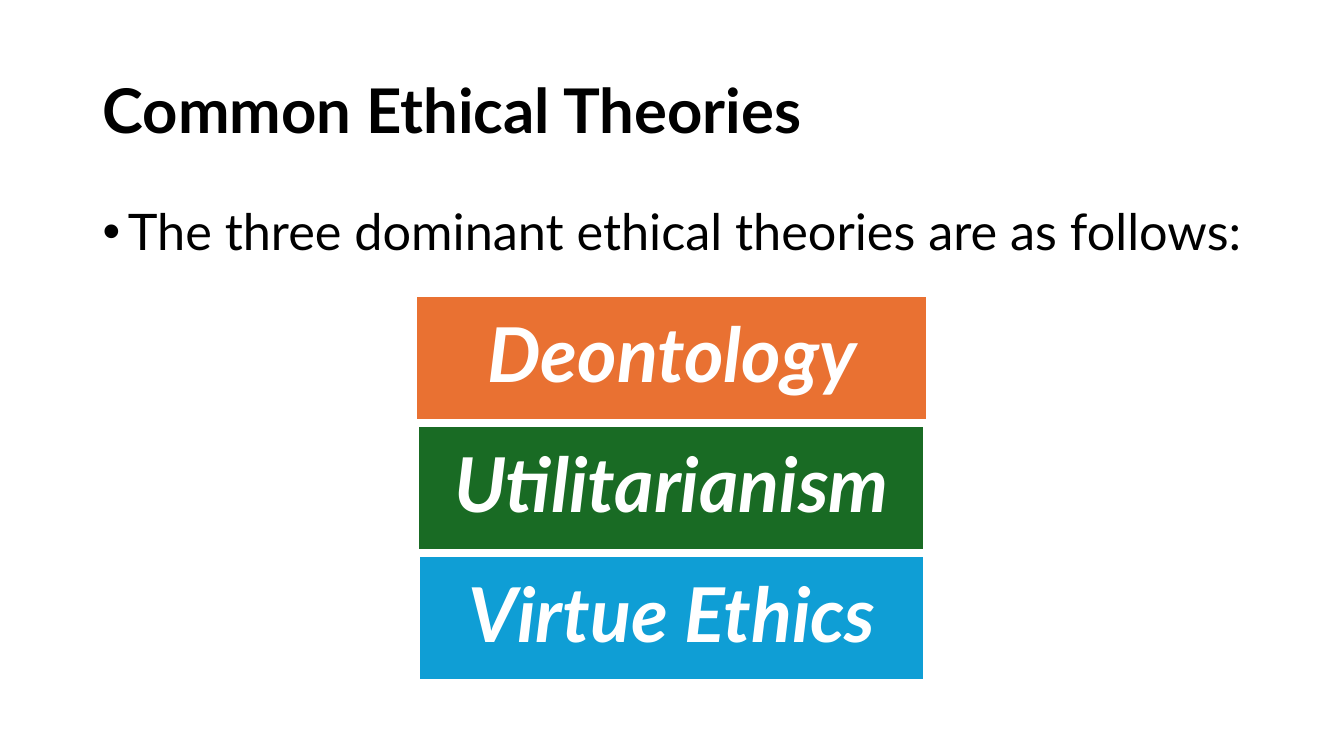
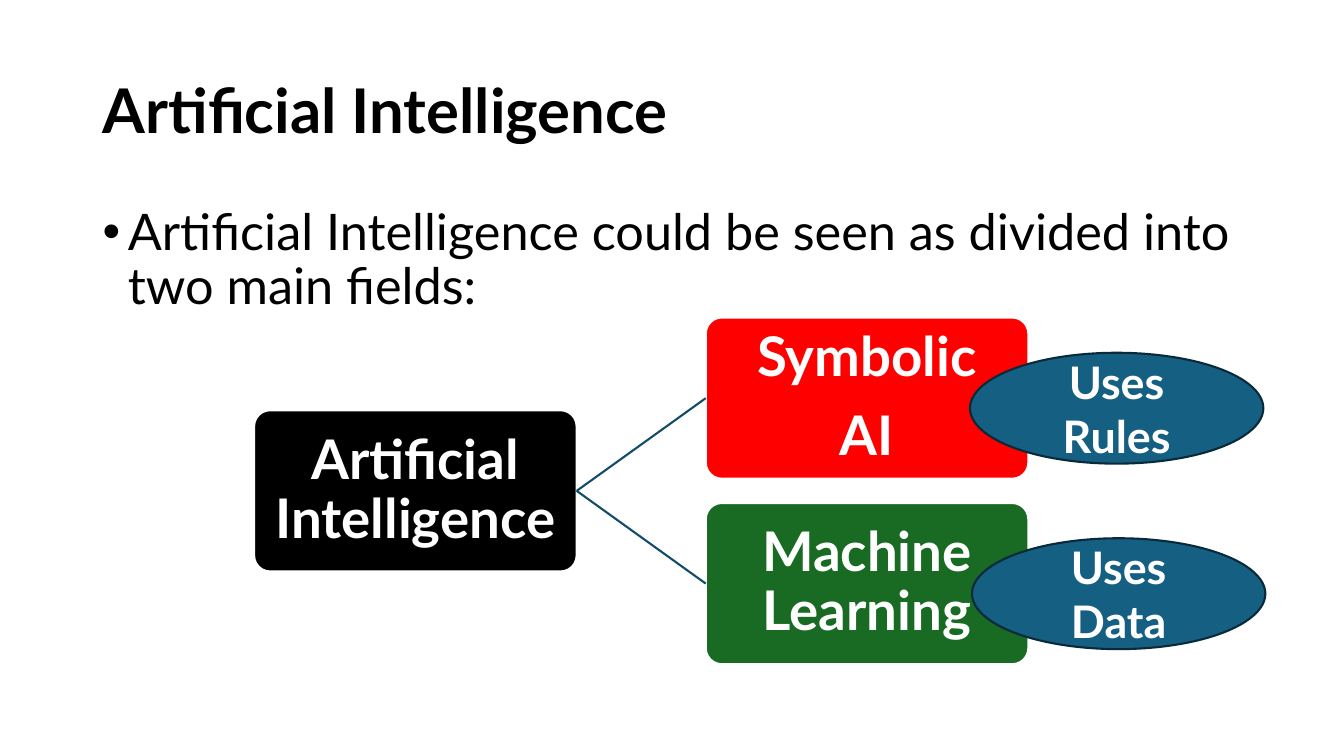
import pptx
import pptx.dml.color
import pptx.enum.shapes
import pptx.enum.text
import pptx.oxml.ns
import pptx.util
from lxml import etree

RGBColor = pptx.dml.color.RGBColor
Pt = pptx.util.Pt
SHAPE = pptx.enum.shapes.MSO_SHAPE
ALIGN = pptx.enum.text.PP_ALIGN
ANCHOR = pptx.enum.text.MSO_ANCHOR
qn = pptx.oxml.ns.qn

BLACK = RGBColor(0x00, 0x00, 0x00)
WHITE = RGBColor(0xFF, 0xFF, 0xFF)
ORANGE = RGBColor(0xE9, 0x71, 0x32)
GREEN = RGBColor(0x19, 0x6B, 0x24)
BLUE = RGBColor(0x0F, 0x9E, 0xD5)
RED = RGBColor(0xFF, 0x00, 0x00)
TEAL = RGBColor(0x15, 0x60, 0x82)
TEAL_LINE = RGBColor(0x11, 0x4D, 0x68)
TEAL_EDGE = RGBColor(0x09, 0x2A, 0x39)

EMU_PER_PX = 9144  # 100 px to the inch
SLIDE_W, SLIDE_H = 1333, 750


def px(n):
    return pptx.util.Emu(n * EMU_PER_PX)


class Deck:
    FONT = "Lato"
    LINE_WIDTH = Pt(1.5)
    TITLE = dict(size=Pt(44), bold=True, color=BLACK)
    BODY = dict(size=Pt(36), color=BLACK)
    BAR = dict(size=Pt(54), bold=True, italic=True, color=WHITE)
    NODE = dict(size=Pt(39), bold=True, color=WHITE)
    NOTE = dict(size=Pt(32), bold=True, color=WHITE)

    def __init__(self):
        self.prs = pptx.Presentation()
        self.prs.slide_width, self.prs.slide_height = px(SLIDE_W), px(SLIDE_H)
        self.s = None

    def slide(self, title, lead):
        self.s = self.prs.slides.add_slide(self.prs.slide_layouts[6])
        self.textbox((92, 40, 1150, 145), title, self.TITLE, ANCHOR.MIDDLE)
        self.textbox((92, 200, 1150, 476), lead, self.BODY, ANCHOR.TOP, bullet=True)

    def set_text(self, sp, text, style, align, anchor, spacing=0.9, gap=0, margins=(10, 5)):
        """Put each line of text in its own paragraph, gap points apart."""
        tf = sp.text_frame
        side, top = (px(m) for m in margins)
        frame = dict(word_wrap=True, vertical_anchor=anchor, margin_left=side,
                     margin_right=side, margin_top=top, margin_bottom=top)
        for name, value in frame.items():
            setattr(tf, name, value)
        for i, line in enumerate(text.split("\n")):
            p = tf.paragraphs[0] if i == 0 else tf.add_paragraph()
            p.alignment, p.line_spacing = align, spacing
            if i:
                p.space_before = Pt(gap)
            r = p.add_run()
            r.text = line
            r.font.name = self.FONT
            for name, value in style.items():
                if name == "color":
                    r.font.color.rgb = value
                else:
                    setattr(r.font, name, value)

    def textbox(self, box, text, style, anchor, bullet=False):
        sp = self.s.shapes.add_textbox(*map(px, box))
        self.set_text(sp, text, style, ALIGN.LEFT, anchor)
        if bullet:
            pPr = sp.text_frame.paragraphs[0]._p.get_or_add_pPr()
            pPr.set("marL", str(px(25)))
            pPr.set("indent", str(px(-25)))
            etree.SubElement(pPr, qn("a:buFont")).set("typeface", "Arial")
            etree.SubElement(pPr, qn("a:buChar")).set("char", "•")

    def shape(self, kind, box, fill, line, text, style, **layout):
        sp = self.s.shapes.add_shape(kind, *map(px, box))
        sp.shadow.inherit = False
        sp.fill.solid()
        sp.fill.fore_color.rgb = fill
        sp.line.color.rgb = line
        sp.line.width = self.LINE_WIDTH
        self.set_text(sp, text, style, ALIGN.CENTER, ANCHOR.MIDDLE, **layout)
        return sp

    def bar(self, top, width, fill, text):
        box = ((SLIDE_W - width) // 2, top, width, 123)
        self.shape(SHAPE.RECTANGLE, box, fill, WHITE, text, self.BAR, margins=(15, 15))

    def node(self, left, top, fill, text):
        sp = self.shape(SHAPE.ROUNDED_RECTANGLE, (left, top, 320, 160), fill, WHITE,
                        text, self.NODE, gap=14, margins=(8, 8))
        sp.adjustments[0] = 0.1
        return sp

    def note(self, left, top, text):
        self.shape(SHAPE.OVAL, (left, top, 291, 110), TEAL, TEAL_EDGE,
                   text, self.NOTE, spacing=1.0)

    def branch(self, parent, child):
        """Join the right side of parent to the left side of child."""
        cn = self.s.shapes.add_connector(
            pptx.enum.shapes.MSO_CONNECTOR.STRAIGHT, 0, 0, 0, 0)
        cn.begin_connect(parent, 3)
        cn.end_connect(child, 1)
        cn.line.color.rgb = TEAL_LINE
        cn.line.width = self.LINE_WIDTH
        etree.SubElement(cn._element.spPr, qn("a:effectLst"))


def theories_slide(deck):
    deck.slide("Common Ethical Theories",
               "The three dominant ethical theories are as follows:")
    bars = [("Deontology", ORANGE, 507), ("Utilitarianism", GREEN, 502),
            ("Virtue Ethics", BLUE, 501)]
    for i, (text, fill, width) in enumerate(bars):
        deck.bar(294 + 129 * i, width, fill, text)


def fields_slide(deck):
    deck.slide("Artificial Intelligence",
               "Artificial Intelligence could be seen as divided into two main fields:")
    root = deck.node(252, 407, BLACK, "Artificial Intelligence")
    fields = [("Symbolic\nAI", RED, "Uses\nRules", 962),
              ("Machine Learning", GREEN, "Uses\nData", 964)]
    for i, (text, fill, note, note_left) in enumerate(fields):
        top = 315 + 184 * i
        deck.branch(root, deck.node(700, top, fill, text))
        deck.note(note_left, top + 35, note)


def main():
    deck = Deck()
    theories_slide(deck)
    fields_slide(deck)
    deck.prs.save("out.pptx")


if __name__ == "__main__":
    main()
